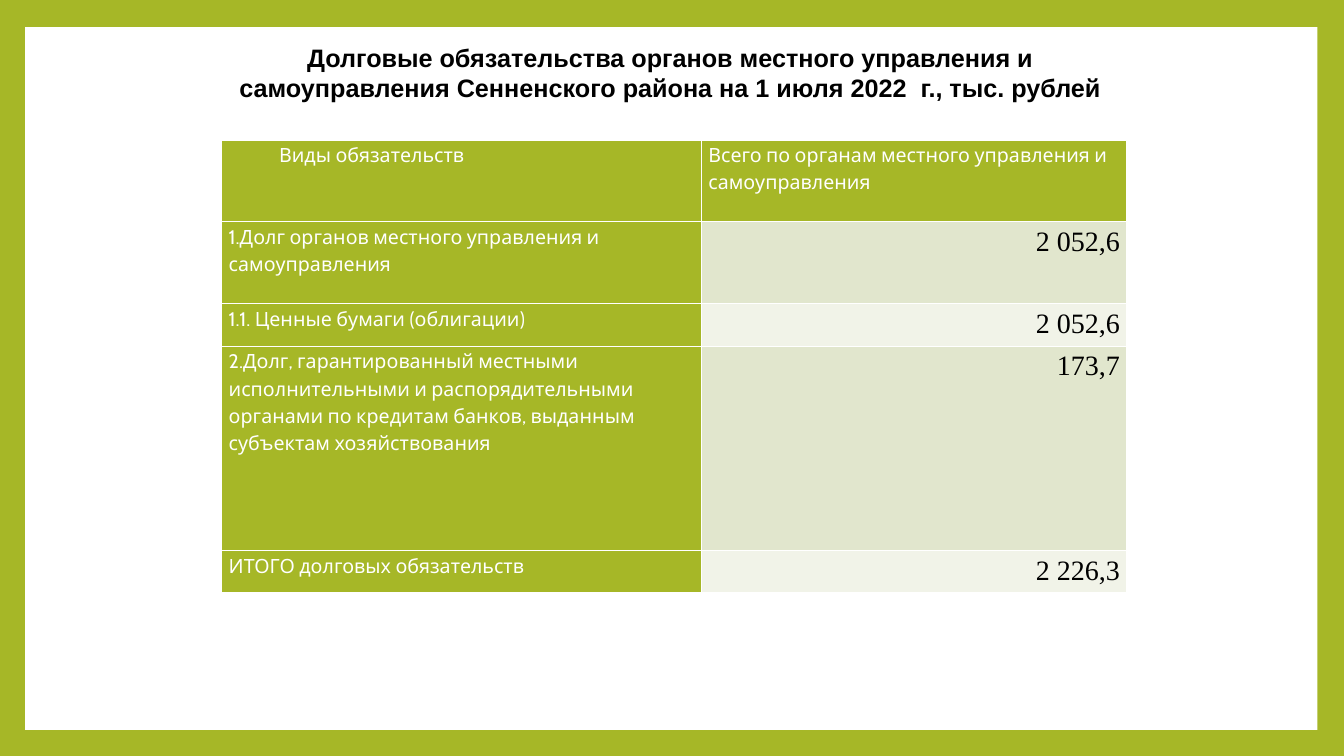
from lxml.etree import SubElement
from pptx import Presentation
from pptx.dml.color import RGBColor
from pptx.enum.shapes import MSO_SHAPE as Preset
from pptx.enum.text import MSO_ANCHOR as Anchor, MSO_AUTO_SIZE as AutoSize, PP_ALIGN as Align
from pptx.oxml.ns import qn
from pptx.util import Pt

GREEN = RGBColor(0xA6, 0xB7, 0x27)
PALE = RGBColor(0xE1, 0xE6, 0xCD)
PALEST = RGBColor(0xF1, 0xF3, 0xE8)
WHITE = RGBColor(0xFF, 0xFF, 0xFF)
BLACK = RGBColor(0, 0, 0)

HEADING = ("Долговые обязательства органов местного управления и самоуправления "
           "Сенненского района на 1 июля 2022  г., тыс. рублей")
HEADER = ("Виды обязательств", "Всего по органам местного управления и самоуправления")
DEBTS = [
    ("1.Долг органов местного управления и самоуправления", "2 052,6"),
    ("1.1. Ценные бумаги (облигации)", "2 052,6"),
    ("2.Долг, гарантированный местными исполнительными и распорядительными "
     "органами по кредитам банков, выданным субъектам хозяйствования", "173,7"),
    ("ИТОГО долговых обязательств", "2 226,3"),
]
COLUMN_WIDTHS = (342.6, 304)
ROW_HEIGHTS = (58.5, 58.5, 30.3, 146, 30.3)


def write(frame, text, font="Cabin", size=14, color=WHITE, bold=False,
          align=Align.LEFT, spacing=1.15, indent=0):
    frame.word_wrap = True
    paragraph = frame.paragraphs[0]
    paragraph.alignment = align
    paragraph.line_spacing = spacing
    if indent:
        paragraph._p.get_or_add_pPr().set("marL", str(Pt(indent)))
    run = paragraph.add_run()
    run.text = text
    run.font.name = font
    run.font.size = Pt(size)
    run.font.bold = bold
    run.font.color.rgb = color


class DebtSlide:
    def __init__(self, deck):
        self.slide = deck.slides.add_slide(deck.slide_layouts[5])
        self.slide.background.fill.solid()
        self.slide.background.fill.fore_color.rgb = GREEN

    def panel(self, left, top, width, height):
        panel = self.slide.shapes.add_shape(
            Preset.RECTANGLE, Pt(left), Pt(top), Pt(width), Pt(height))
        panel.shadow.inherit = False
        panel.fill.solid()
        panel.fill.fore_color.rgb = WHITE
        panel.line.fill.background()
        tree = self.slide.shapes._spTree
        tree.remove(panel._element)
        tree.insert(2, panel._element)

    def title(self, text, left, top, width, height):
        heading = self.slide.shapes.title
        heading.left, heading.top = Pt(left), Pt(top)
        heading.width, heading.height = Pt(width), Pt(height)
        frame = heading.text_frame
        frame.vertical_anchor = Anchor.MIDDLE
        frame.auto_size = AutoSize.NONE
        write(frame, text, font="Arial", size=18, color=BLACK, bold=True,
              align=Align.CENTER, spacing=1.0)

    def cell(self, cell, text, fill, **text_format):
        cell.margin_left = cell.margin_right = Pt(5)
        cell.margin_top = cell.margin_bottom = 0
        write(cell.text_frame, text, **text_format)
        properties = cell._tc.get_or_add_tcPr()
        for side in ("a:lnL", "a:lnR", "a:lnT", "a:lnB"):
            border = SubElement(properties, qn(side), w=str(Pt(1)))
            solid = SubElement(border, qn("a:solidFill"))
            SubElement(solid, qn("a:srgbClr"), val=str(WHITE))
        cell.fill.solid()
        cell.fill.fore_color.rgb = fill

    def table(self, left, top):
        table = self.slide.shapes.add_table(
            len(ROW_HEIGHTS), len(COLUMN_WIDTHS), Pt(left), Pt(top),
            Pt(sum(COLUMN_WIDTHS)), Pt(sum(ROW_HEIGHTS))).table
        for column, width in zip(table.columns, COLUMN_WIDTHS):
            column.width = Pt(width)
        for row, height in zip(table.rows, ROW_HEIGHTS):
            row.height = Pt(height)
        kinds, total = HEADER
        self.cell(table.cell(0, 0), kinds, GREEN, indent=36)
        self.cell(table.cell(0, 1), total, GREEN)
        for number, (debt, amount) in enumerate(DEBTS, start=1):
            self.cell(table.cell(number, 0), debt, GREEN)
            self.cell(table.cell(number, 1), amount, PALE if number % 2 else PALEST,
                      font="Times New Roman", size=20, color=BLACK, align=Align.RIGHT)


def main():
    deck = Presentation()
    deck.slide_width, deck.slide_height = Pt(960), Pt(540)
    debts = DebtSlide(deck)
    debts.panel(18, 19.4, 923, 502)
    debts.title(HEADING, 152.6, 26, 652.3, 51)
    debts.table(158.4, 100)
    deck.save("out.pptx")


if __name__ == "__main__":
    main()
